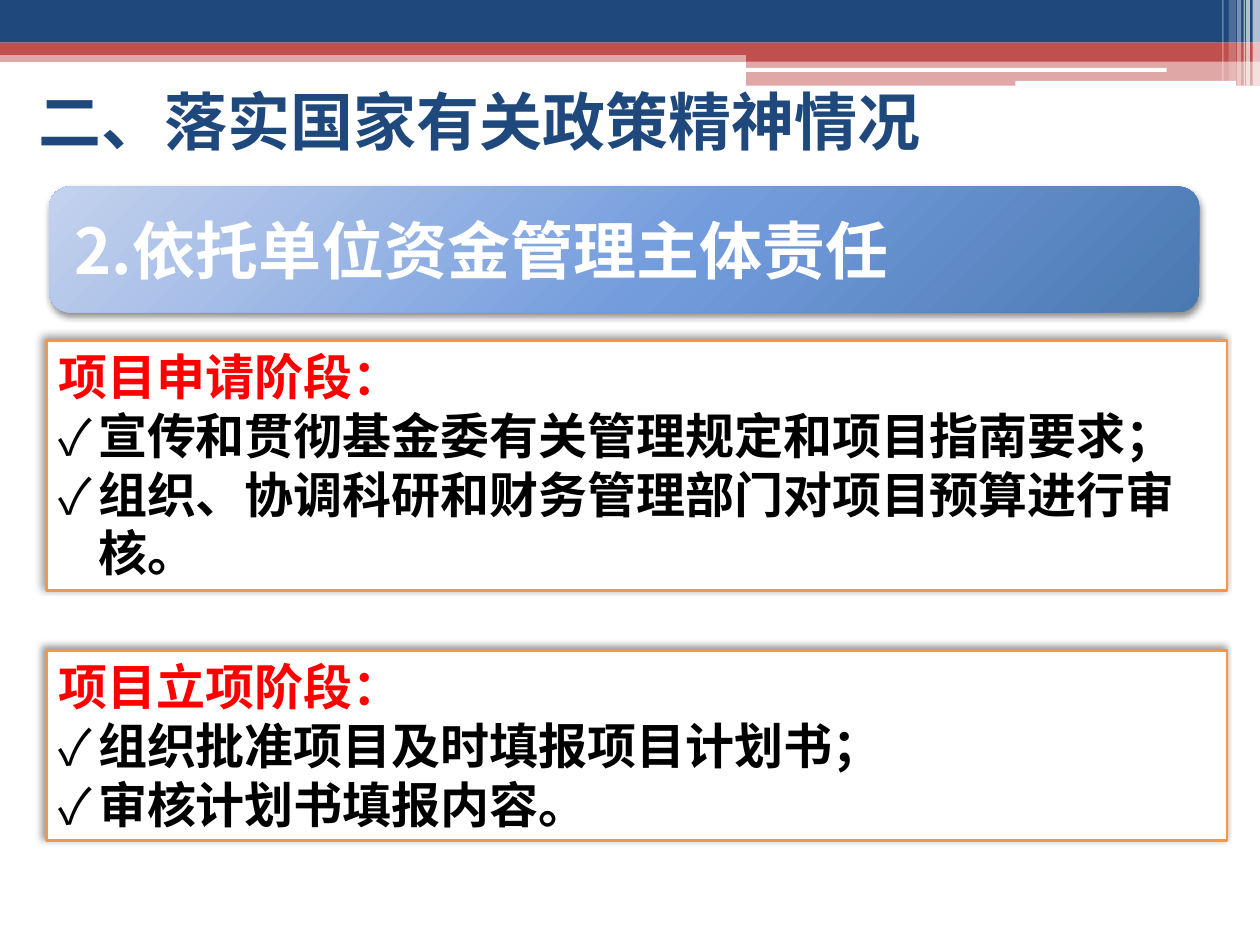
from lxml import etree
from pptx import Presentation, util as u
from pptx.dml.color import RGBColor
from pptx.enum import shapes, text
from pptx.oxml.ns import qn

THEME = dict(font="Noto Sans CJK SC", navy="1F497D", brick="C0504D", white="FFFFFF",
             orange="F79646", red="FF0000", black="000000", heading=36, body=28,
             gradient=[(0, "C4D2EE"), (55, "739CDD"), (100, "4A78B0")])
W, H = 25.4, 19.05
RECT = shapes.MSO_SHAPE.RECTANGLE
ROUND = shapes.MSO_SHAPE.ROUNDED_RECTANGLE

TITLE = "二、落实国家有关政策精神情况"
BANNER = "2.依托单位资金管理主体责任"
STAGES = [  # top, height, heading, items
    (6.86, 5.05, "项目申请阶段：", ["宣传和贯彻基金委有关管理规定和项目指南要求；",
                              "组织、协调科研和财务管理部门对项目预算进行审核。"]),
    (13.11, 3.84, "项目立项阶段：", ["组织批准项目及时填报项目计划书；", "审核计划书填报内容。"]),
]
BANDS = [  # shape, box, colour, opacity %
    (RECT, (0, 1.02, W, 0.23), "brick", 50),
    (RECT, (0, 0, W, 0.86), "navy", 100),
    (RECT, (0, 0.86, W, 0.25), "brick", 100),
    (RECT, (15.04, 0.99, 10.36, 0.25), "brick", 100),
    (RECT, (15.04, 1.22, 10.36, 0.51), "brick", 50),
    (ROUND, (15.01, 1.37, 8.51, 0.08), "white", 100),
    (ROUND, (20.47, 1.63, 4.45, 0.1), "white", 100),
]
STRIPES = [  # left, width, height, opacity %
    (25.25, 0.15, 1.73, 65), (25.12, 0.08, 1.73, 65), (25.07, 0.03, 1.73, 60),
    (24.94, 0.08, 1.73, 40), (24.77, 0.15, 1.63, 20), (24.64, 0.03, 1.63, 30),
]


def cm(*values):
    return [u.Cm(v) for v in values]


def sub(parent, tag, **attrs):
    return etree.SubElement(parent, qn(tag), {k: str(v) for k, v in attrs.items()})


def add_box(parent, kind, box, fill=None, alpha=100, line=None):
    sp = parent.shapes.add_shape(kind, *cm(*box))
    sp.shadow.inherit = False
    if fill:
        sp.fill.solid()
        sp.fill.fore_color.rgb = RGBColor.from_string(THEME[fill])
        if alpha < 100:
            color = sp.fill._xPr.find(".//" + qn("a:srgbClr"))
            sub(color, "a:alpha", val=alpha * 1000)
    if line:
        sp.line.color.rgb = RGBColor.from_string(THEME[line])
        sp.line.width = u.Pt(1.5)
    else:
        sp.line.fill.background()
    return sp


def add_shadow(sp, alpha, dist, angle):
    effects = sp._element.spPr.find(qn("a:effectLst"))
    shadow = sub(effects, "a:outerShdw", blurRad=u.Pt(4), dist=u.Pt(dist),
                 dir=angle * 60000, rotWithShape=0)
    sub(sub(shadow, "a:srgbClr", val=THEME["black"]), "a:alpha", val=alpha * 1000)


def add_radial_fill(sp):
    """Fill with a circular gradient centred beyond the top left corner."""
    sp.fill.gradient()
    grad = sp._element.spPr.find(qn("a:gradFill"))
    for child in list(grad):
        grad.remove(child)
    stops = sub(grad, "a:gsLst")
    for pos, color in THEME["gradient"]:
        sub(sub(stops, "a:gs", pos=pos * 1000), "a:srgbClr", val=color)
    sub(sub(grad, "a:path", path="circle"), "a:fillToRect",
        l=-40000, t=-90000, r=140000, b=190000)


def add_text(p, content, size, color, bullet=None):
    p.alignment = text.PP_ALIGN.LEFT
    r = p.add_run()
    r.text = content
    r.font.name, r.font.size, r.font.bold = THEME["font"], u.Pt(THEME[size]), True
    r.font.color.rgb = RGBColor.from_string(THEME[color])
    sub(r.font._element, "a:ea", typeface=THEME["font"])
    if bullet:
        pPr = p._p.get_or_add_pPr()
        pPr.set("marL", str(u.Cm(0.79)))
        pPr.set("indent", str(u.Cm(-0.79)))
        sub(pPr, "a:buFont", typeface=THEME["font"])
        sub(pPr, "a:buChar", char=bullet)


def add_heading(parent, content, box, color, inset=None):
    tf = parent.shapes.add_textbox(*cm(*box)).text_frame
    tf.word_wrap = True
    tf.vertical_anchor = text.MSO_ANCHOR.MIDDLE
    if inset:
        tf.margin_left, tf.margin_top, tf.margin_right, tf.margin_bottom = cm(*[inset] * 4)
    add_text(tf.paragraphs[0], content, "heading", color)


def add_stage(s, top, height, heading, items):
    sp = add_box(s, RECT, (0.94, top, 23.8, height), "white", line="orange")
    add_shadow(sp, 40, 3, 225)
    tf = sp.text_frame
    tf.word_wrap = True
    tf.auto_size = text.MSO_AUTO_SIZE.SHAPE_TO_FIT_TEXT
    tf.vertical_anchor = text.MSO_ANCHOR.TOP
    add_text(tf.paragraphs[0], heading, "body", "red")
    for item in items:
        add_text(tf.add_paragraph(), item, "body", "black", bullet="✓")


def main():
    prs = Presentation()
    prs.slide_width, prs.slide_height = cm(W, H)
    s = prs.slides.add_slide(prs.slide_layouts[6])
    for band in BANDS:
        add_box(s, *band)
    for left, width, height, alpha in STRIPES:
        add_box(s, RECT, (left, 0, width, height), "white", alpha)
    add_heading(s, TITLE, (0.53, 1.52, 23.04, 1.8), "navy")
    for stage in STAGES:
        add_stage(s, *stage)
    banner = s.shapes.add_group_shape()
    sp = add_box(banner, ROUND, (0.99, 3.76, 23.19, 2.54))
    add_radial_fill(sp)
    add_shadow(sp, 45, 2, 90)
    add_heading(banner, BANNER, (1.12, 3.89, 22.96, 2.29), "white", inset=0.38)
    prs.save("out.pptx")


if __name__ == "__main__":
    main()
